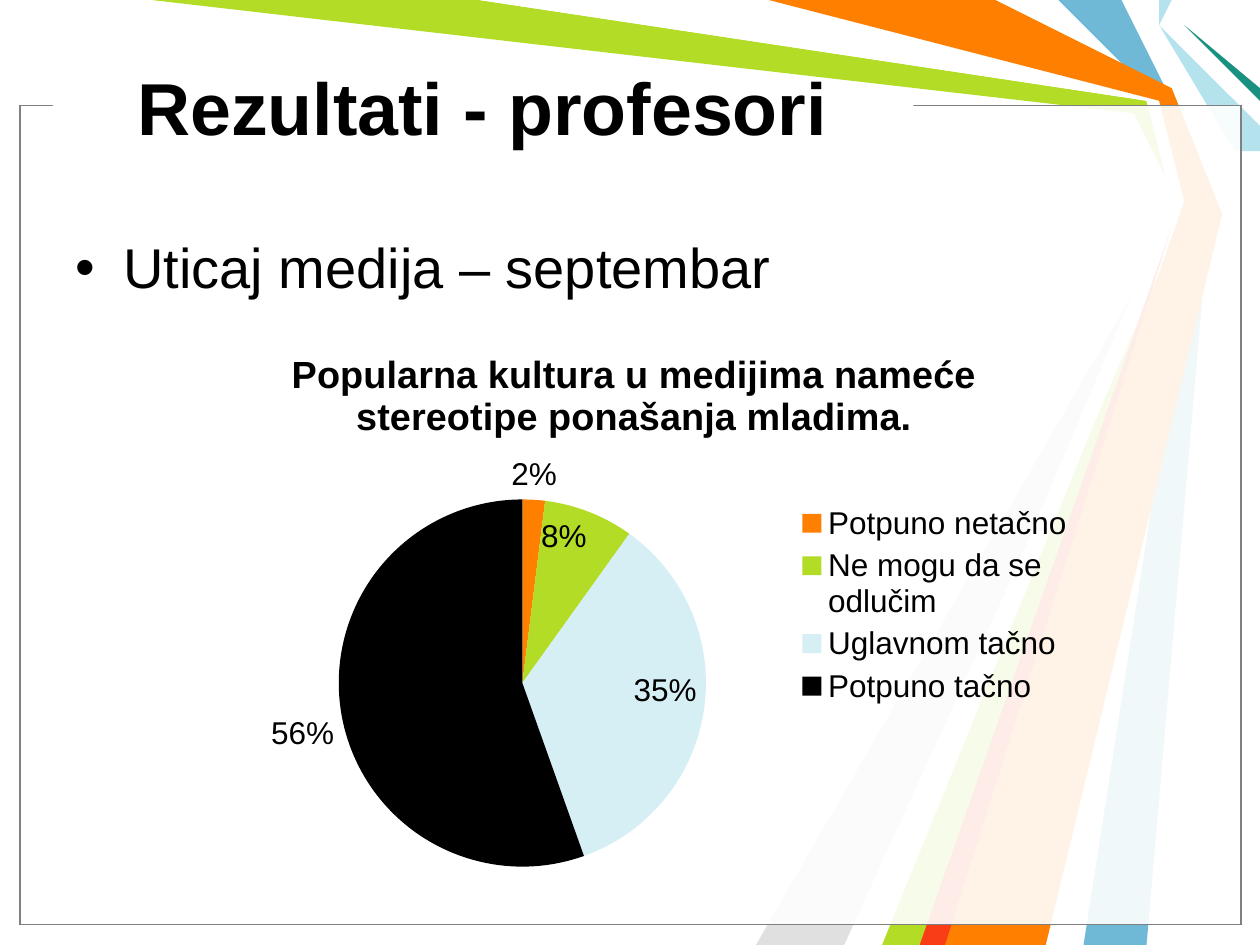
from typing import NamedTuple

from lxml.etree import SubElement
from pptx import Presentation
from pptx.chart.data import CategoryChartData
from pptx.dml.color import RGBColor
from pptx.enum.chart import XL_CHART_TYPE as ChartType
from pptx.enum.chart import XL_LABEL_POSITION as LabelSpot
from pptx.enum.chart import XL_LEGEND_POSITION as LegendSpot
from pptx.enum.shapes import MSO_SHAPE as Preset
from pptx.enum.text import MSO_ANCHOR as Anchor
from pptx.oxml import parse_xml
from pptx.oxml.ns import nsdecls, qn
from pptx.util import Inches, Pt

COLUMNS, ROWS = 100, 75
CELL = Inches(0.1)
FONT = "Arial"
COLOURS = {
    "blue": "6FB9D7", "lime": "B3DC27", "silver": "E0E0E0", "white": "FFFFFF",
    "aqua": "B4E3EE", "teal": "189180", "orange": "FF7F00", "red": "F93D17",
    "pale": "D6EFF5", "black": "000000", "grey": "808080",
}


class Area(NamedTuple):
    left: float
    top: float
    width: float
    height: float


class Ribbon(NamedTuple):
    colour: str
    points: list[tuple[float, float]]


class Slice(NamedTuple):
    label: str
    value: int
    colour: str
    spot: LabelSpot


RIBBONS = [
    Ribbon("blue", [(89.2, 0), (92.9, 7.7), (95.8, 16.7), (91.1, 74.9), (85.6, 74.9),
                    (95, 16.7), (91.7, 7.5), (83.8, 0)]),
    Ribbon("lime", [(11.7, 0), (38.3, 0), (91.4, 7.8), (94.2, 16.9), (74.2, 75),
                    (69.2, 75), (93.5, 17.3), (90.1, 9.1)]),
    Ribbon("silver", [(66.7, 75), (92.7, 18.1), (60, 75)]),
    Ribbon("white", [(37.5, 0), (91, 8.2), (93.2, 16.2), (67.5, 75), (70, 75),
                     (94.1, 15.8), (91.7, 7.5), (60, 0)]),
    Ribbon("aqua", [(92.5, 0), (91.7, 1.7), (97.8, 12), (100, 12.5), (100, 10),
                    (92.5, 1.7), (93.2, 0)]),
    Ribbon("teal", [(100, 8.3), (94.2, 2.5), (100, 6.7)]),
    Ribbon("orange", [(60.8, 0), (79.2, 0), (93, 7), (96.6, 16.9), (83.3, 75),
                      (73.3, 75), (94.2, 15.8), (91.7, 7.5)]),
    Ribbon("red", [(73.2, 75), (93.2, 18.3), (74.9, 75)]),
]
SLICES = [
    Slice("Potpuno netačno", 2, "orange", LabelSpot.OUTSIDE_END),
    Slice("Ne mogu da se odlučim", 8, "lime", LabelSpot.INSIDE_END),
    Slice("Uglavnom tačno", 35, "pale", LabelSpot.INSIDE_END),
    Slice("Potpuno tačno", 56, "black", LabelSpot.OUTSIDE_END),
]
PANEL = Area(1.6, 8.4, 96.9, 65)
TITLE_GAP = Area(4.2, 7.4, 68.3, 1.7)
TITLE = Area(9.9, 2.2, 68.9, 12.5)
BODY = Area(5, 18, 90, 7)
CHART = Area(14.8, 25.8, 71.1, 44.4)
PIE_SHARE = Area(0.17, 0.31, 0.41, 0.66)
LEGEND_SHARE = Area(0.68, 0.31, 0.31, 0.38)


def colour_of(name: str) -> RGBColor:
    """Look up a palette colour."""
    return RGBColor.from_string(COLOURS[name])


def place(area: Area) -> list[int]:
    """Turn grid units into slide lengths."""
    return [round(length * CELL) for length in area]


def paint(shape, name: str) -> None:
    """Fill a shape and drop its shadow."""
    shape.shadow.inherit = False
    shape.fill.solid()
    shape.fill.fore_color.rgb = colour_of(name)


def add_ribbon(page, ribbon: Ribbon) -> None:
    """Draw one closed outline of the backdrop."""
    builder = page.shapes.build_freeform(*ribbon.points[0], scale=CELL)
    builder.add_line_segments(ribbon.points[1:], close=True)
    shape = builder.convert_to_shape()
    paint(shape, ribbon.colour)
    shape.line.fill.background()


def add_panel(page, area: Area, edge: str | None, opacity: int = 100) -> None:
    """Draw a white rectangle, see-through if opacity is below 100."""
    shape = page.shapes.add_shape(Preset.RECTANGLE, *place(area))
    paint(shape, "white")
    if opacity < 100:
        tint = shape.fill._xPr.find(qn("a:solidFill"))[0]
        SubElement(tint, qn("a:alpha"), val=str(opacity * 1000))
    if edge:
        shape.line.color.rgb = colour_of(edge)
        shape.line.width = Pt(0.75)
    else:
        shape.line.fill.background()


def style(font, size: float, bold: bool = False) -> None:
    """Apply the common black typeface."""
    font.name, font.size, font.bold = FONT, Pt(size), bold
    font.color.rgb = colour_of("black")


def add_text(page, area: Area, text: str, size: float, title: bool) -> None:
    """Write a bold title or a bulleted line."""
    box = page.shapes.add_textbox(*place(area))
    frame = box.text_frame
    frame.word_wrap = True
    frame.vertical_anchor = Anchor.MIDDLE if title else Anchor.TOP
    frame.text = text
    para = frame.paragraphs[0]
    if not title:
        props = para._p.get_or_add_pPr()
        props.set("marL", str(Inches(0.38)))
        props.set("indent", str(-Inches(0.38)))
        SubElement(props, qn("a:buFont"), typeface=FONT)
        SubElement(props, qn("a:buChar"), char="•")
    style(para.runs[0].font, size, title)


def layout_of(share: Area, inner: bool):
    """Make a manual chart layout from shares of the chart area."""
    target = '<c:layoutTarget val="inner"/>' if inner else ""
    modes = '<c:xMode val="edge"/><c:yMode val="edge"/>'
    sizes = "".join(f'<c:{tag} val="{part}"/>' for tag, part in zip("xywh", share))
    return parse_xml(f'<c:layout {nsdecls("c")}><c:manualLayout>{target}{modes}{sizes}'
                     "</c:manualLayout></c:layout>")


def set_layout(parent, share: Area, after: str | None) -> None:
    """Replace the layout of a plot area or legend."""
    for old in parent.findall(qn("c:layout")):
        parent.remove(old)
    index = parent.index(parent.find(qn(after))) + 1 if after else 0
    parent.insert(index, layout_of(share, after is None))


def add_pie(page, area: Area, title: str) -> None:
    """Add the pie chart of answers."""
    data = CategoryChartData(number_format="0")
    data.categories = [part.label for part in SLICES]
    data.add_series("Series 1", [part.value for part in SLICES])
    chart = page.shapes.add_chart(ChartType.PIE, *place(area), data).chart
    style(chart.font, 18)
    chart.has_title = True
    chart.chart_title.text_frame.text = title
    style(chart.chart_title.text_frame.paragraphs[0].runs[0].font, 21.6, True)
    chart.has_legend = True
    chart.legend.position = LegendSpot.RIGHT
    chart.legend.include_in_layout = False
    style(chart.legend.font, 18)
    plot = chart.plots[0]
    plot.vary_by_categories = True
    series = plot.series[0]
    labels = series.data_labels
    labels.show_value = True
    labels.number_format, labels.number_format_is_linked = '0"%"', False
    style(labels.font, 18)
    for index, part in enumerate(SLICES):
        point = series.points[index]
        point.format.fill.solid()
        point.format.fill.fore_color.rgb = colour_of(part.colour)
        style(point.data_label.font, 18)
        point.data_label.position = part.spot
    set_layout(chart._chartSpace.chart.plotArea, PIE_SHARE, None)
    set_layout(chart.legend._element, LEGEND_SHARE, "c:legendPos")


def main() -> None:
    """Build and save the slide."""
    deck = Presentation()
    deck.slide_width, deck.slide_height = COLUMNS * CELL, ROWS * CELL
    page = deck.slides.add_slide(deck.slide_layouts[6])
    for ribbon in RIBBONS:
        add_ribbon(page, ribbon)
    for edge in ("black", "grey"):
        add_panel(page, PANEL, edge, opacity=69)
    add_panel(page, TITLE_GAP, None)
    add_text(page, TITLE, "Rezultati - profesori", 42, title=True)
    add_text(page, BODY, "Uticaj medija – septembar", 32, title=False)
    add_pie(page, CHART, "Popularna kultura u medijima nameće stereotipe ponašanja mladima.")
    deck.save("out.pptx")


if __name__ == "__main__":
    main()
